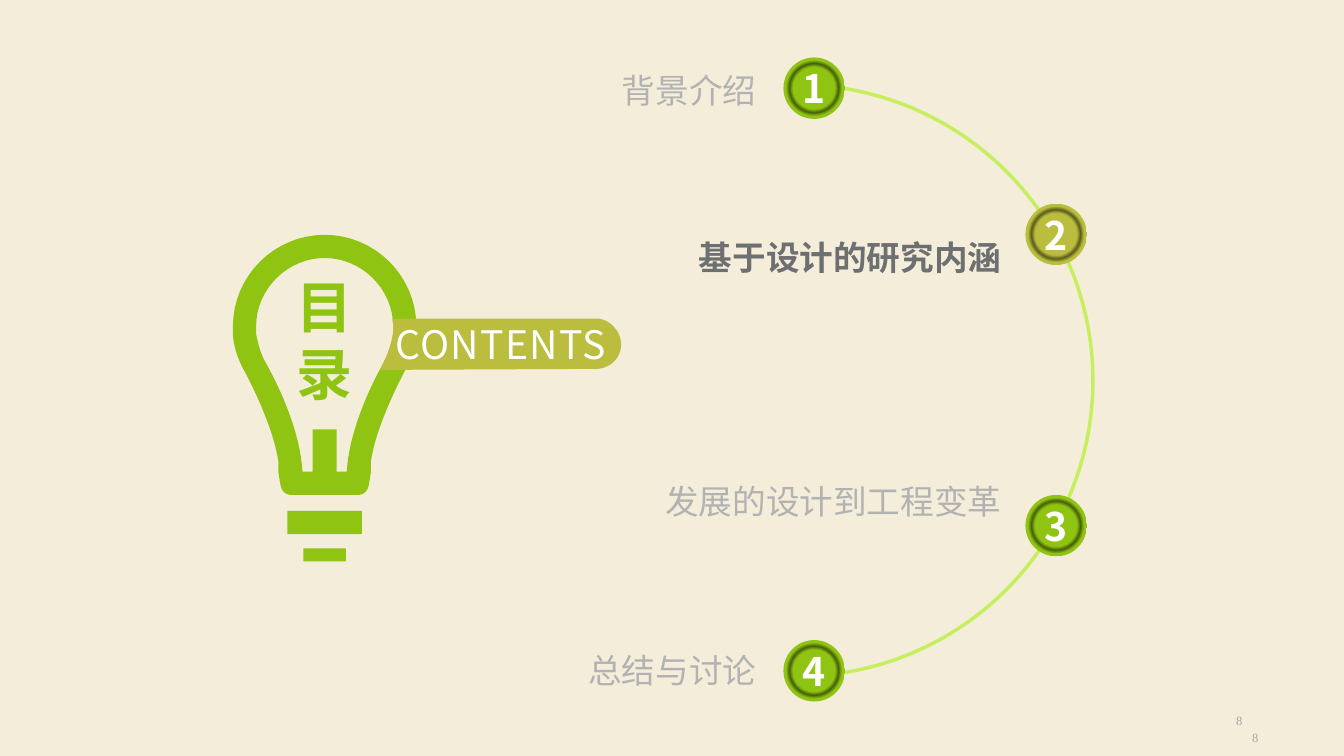
from dataclasses import dataclass

from lxml import etree
from pptx import Presentation
from pptx.dml.color import RGBColor
from pptx.enum.shapes import MSO_SHAPE
from pptx.enum.text import MSO_ANCHOR, PP_ALIGN
from pptx.oxml import parse_xml
from pptx.oxml.ns import nsdecls, qn
from pptx.util import Inches, Pt

ARC, OVAL = MSO_SHAPE.ARC, MSO_SHAPE.OVAL
MIDDLE = MSO_ANCHOR.MIDDLE
CENTER, RIGHT = PP_ALIGN.CENTER, PP_ALIGN.RIGHT


@dataclass(frozen=True)
class Theme:
    paper: str = "F4EDDA"
    green: str = "90C413"
    moss: str = "486209"
    olive: str = "BABD3D"
    umber: str = "5D5E1F"
    lime: str = "C5EF5E"
    white: str = "FFFFFF"
    muted: str = "B2B2B2"
    strong: str = "6D6F71"
    faint: str = "A6A6A6"
    sans: str = "Noto Sans CJK SC"
    serif: str = "Times New Roman"
    head: int = 40
    large: int = 28
    label: int = 24
    small: int = 9


T = Theme()

# Number, node left and top, label left and top, active
TOPICS = [
    ("1", 7.77, 0.57, "背景介绍", 3.77, 0.29, False),
    ("2", 10.17, 2.02, "基于设计的研究内涵", 6.2, 1.95, True),
    ("3", 10.17, 4.91, "发展的设计到工程变革", 6.2, 4.37, False),
    ("4", 7.77, 6.35, "总结与讨论", 3.77, 6.05, False),
]
NODE = 0.61
AXIS = 3.22  # centre line of the bulb


def rgb(code):
    return RGBColor.from_string(code)


def write(shape, text, size, color, bold=False, align=CENTER, font=T.sans,
          pad=(0, 0, 0, 0), wrap=True, lead=None, space=None):
    frame = shape.text_frame
    frame.word_wrap = wrap
    frame.vertical_anchor = MIDDLE
    (frame.margin_left, frame.margin_top,
     frame.margin_right, frame.margin_bottom) = map(Inches, pad)
    for i, line in enumerate(text.split("\n")):
        para = frame.paragraphs[0] if i == 0 else frame.add_paragraph()
        para.alignment = align
        if lead:
            para.line_spacing = lead
        run = para.add_run()
        run.text = line
        run.font.size, run.font.bold, run.font.name = Pt(size), bold, font
        run.font.color.rgb = rgb(color)
        props = run._r.get_or_add_rPr()
        if space:
            props.set("spc", str(space))
        etree.SubElement(props, qn("a:ea")).set("typeface", font)


def label(slide, text, left, top, width, height, size, color, **style):
    box = slide.shapes.add_textbox(*map(Inches, (left, top, width, height)))
    write(box, text, size, color, align=RIGHT, pad=(0.1, 0.05, 0.1, 0.05), **style)


def curve(a, b, c, d, steps=16):
    """Points along a cubic curve from a to d."""
    def at(t):
        u = 1 - t
        return tuple(u**3 * p + 3 * u * u * t * q + 3 * u * t * t * r + t**3 * s
                     for p, q, r, s in zip(a, b, c, d))
    return [at(i / steps) for i in range(steps + 1)]


def mirror(half):
    """Close a right-hand profile, given from the axis, with its left side."""
    right = [(AXIS + x, y) for x, y in half]
    left = [(AXIS - x, y) for x, y in reversed(half)]
    return right + left


def outline(slide, rings, color):
    rings = [[(Inches(x), Inches(y)) for x, y in ring] for ring in rings]
    form = slide.shapes.build_freeform(*rings[0][0], scale=1.0)
    for i, ring in enumerate(rings):
        if i:
            form.move_to(*ring[0])
        form.add_line_segments(ring[1:], close=True)
    shape = form.convert_to_shape()
    shape.shadow.inherit = False
    shape.fill.solid()
    shape.fill.fore_color.rgb = rgb(color)
    shape.line.fill.background()
    return shape


def bulb(slide):
    outer = (curve((0, 2.33), (0.5, 2.33), (0.91, 2.74), (0.91, 3.24))
             + curve((0.91, 3.32), (0.9, 3.46), (0.85, 3.59), (0.78, 3.71))
             + curve((0.78, 3.71), (0.64, 3.98), (0.5, 4.31), (0.46, 4.57))
             + [(0.46, 4.68)]
             + curve((0.44, 4.8), (0.43, 4.87), (0.39, 4.91), (0.33, 4.91)))
    inner = (curve((0, 2.56), (0.37, 2.56), (0.68, 2.87), (0.68, 3.24))
             + curve((0.68, 3.31), (0.66, 3.41), (0.64, 3.49), (0.6, 3.57))
             + curve((0.6, 3.57), (0.43, 3.87), (0.24, 4.3), (0.22, 4.68))
             + [(0.12, 4.68), (0.12, 4.26)])
    bars = [mirror([(w, top), (w, low)])
            for w, top, low in ((0.37, 5.07, 5.3), (0.21, 5.44, 5.57))]
    shape = outline(slide, [mirror(outer), mirror(inner)[::-1], *bars], T.green)
    write(shape, "目\n录", T.head, T.green, bold=True,
          pad=(0, 0, 0, 1.16), lead=Pt(48))


def tag(slide):
    ring = ([(3.89, 3.16)]
            + curve((5.91, 3.16), (6.04, 3.16), (6.16, 3.28), (6.16, 3.42))
            + curve((6.16, 3.42), (6.16, 3.55), (6.05, 3.66), (5.91, 3.66))
            + curve((3.77, 3.67), (3.85, 3.5), (3.93, 3.33), (3.89, 3.16)))
    write(outline(slide, [ring], T.olive), "CONTENTS", T.large, T.white,
          wrap=False, space=100)


def arc(slide):
    shape = slide.shapes.add_shape(
        ARC, *map(Inches, (4.97, 0.84, 5.87, 5.87)))
    shape.adjustments[0], shape.adjustments[1] = 162, 54  # 270 to 90 degrees
    shape.shadow.inherit = False
    shape.fill.background()
    shape.line.color.rgb = rgb(T.lime)
    shape.line.width = Pt(2.5)


def node(slide, text, left, top, color, ring):
    shape = slide.shapes.add_shape(
        OVAL, *map(Inches, (left, top, NODE, NODE)))
    shape.shadow.inherit = False
    shape.line.fill.background()
    # Radial fill with a dark ring
    stops = "".join(
        f'<a:gs pos="{pos}000"><a:srgbClr val="{code}"/></a:gs>'
        for pos, code in ((48, color), (56, ring), (64, color)))
    fill = parse_xml(
        f'<a:gradFill {nsdecls("a")} rotWithShape="1"><a:gsLst>{stops}</a:gsLst>'
        '<a:path path="circle"><a:fillToRect l="50000" t="50000" r="50000"'
        ' b="50000"/></a:path></a:gradFill>')
    shape.fill.background()
    props = shape._element.spPr
    props.replace(props.find(qn("a:noFill")), fill)
    write(shape, text, T.large, T.white, bold=True, wrap=False)


def main():
    deck = Presentation()
    deck.slide_width, deck.slide_height = Inches(13.33), Inches(7.5)
    slide = deck.slides.add_slide(deck.slide_layouts[6])
    slide.background.fill.solid()
    slide.background.fill.fore_color.rgb = rgb(T.paper)

    # Topics along the arc
    arc(slide)
    for num, left, top, text, x, y, active in TOPICS:
        tones = (T.olive, T.umber) if active else (T.green, T.moss)
        node(slide, num, left, top, *tones)
        label(slide, text, x, y, 3.83, 1.2, T.label,
              T.strong if active else T.muted, bold=active)

    # Heading
    bulb(slide)
    tag(slide)

    # Page numbers
    for left, top in ((9.58, 7.12), (9.42, 6.95)):
        label(slide, "8", left, top, 3, 0.4, T.small, T.faint, font=T.serif)

    deck.save("out.pptx")


if __name__ == "__main__":
    main()
